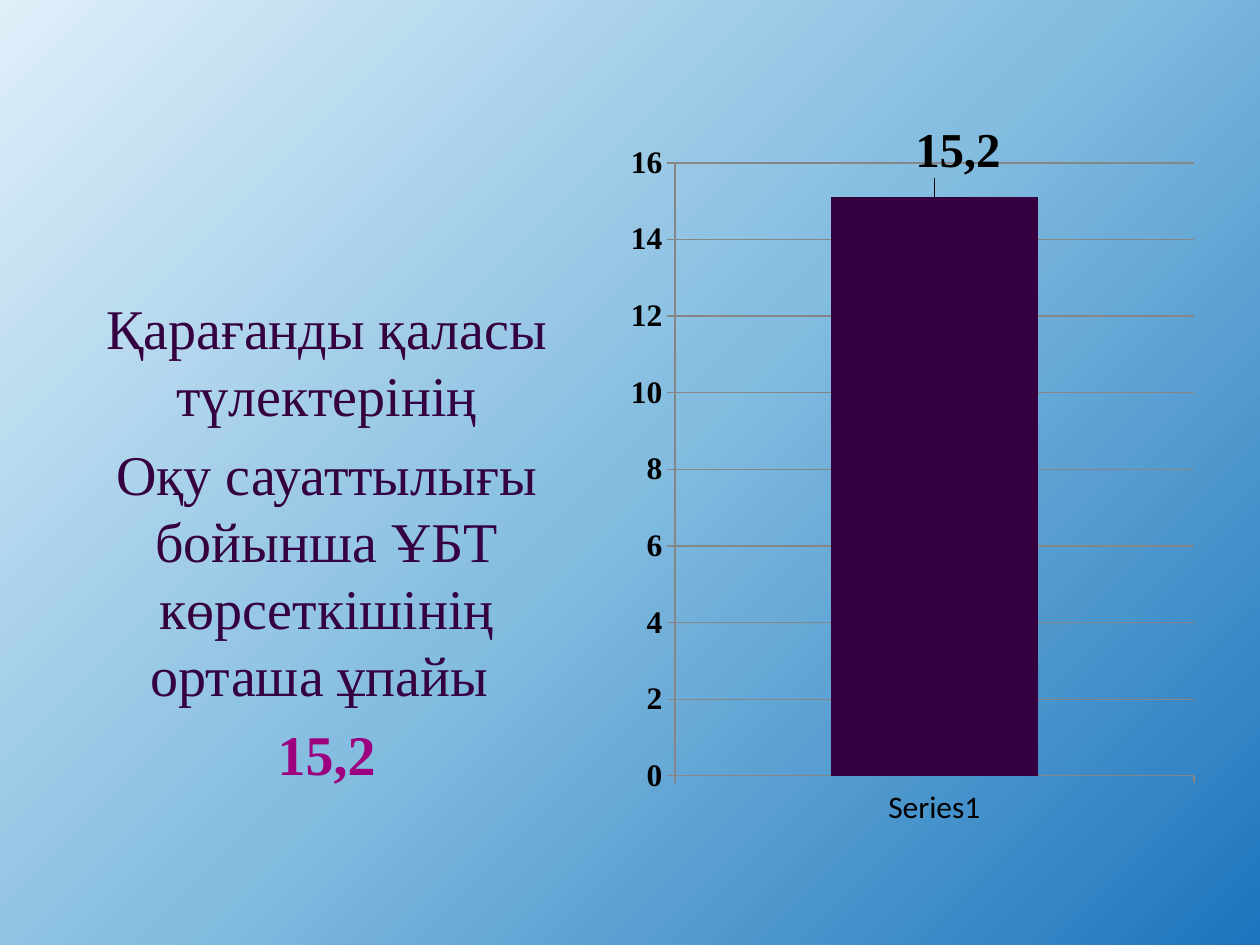
from copy import deepcopy
from lxml.etree import SubElement
from pptx import Presentation
from pptx.chart.data import CategoryChartData
from pptx.dml.color import RGBColor
from pptx.enum.chart import XL_CHART_TYPE, XL_LABEL_POSITION, XL_TICK_MARK
from pptx.enum.text import PP_ALIGN
from pptx.oxml.ns import qn
from pptx.util import Pt

HUES = {"deep": "1D75BD", "mid": "84BDE0", "pale": "DFEFF9",
        "plum": "340040", "pink": "9C007F", "black": "000000", "grid": "868686"}
SERIF = "Times New Roman"
SANS = "Calibri"


class Deck:
    def __init__(self):
        self.prs = Presentation()
        self.prs.slide_width, self.prs.slide_height = Pt(720), Pt(540)
        self.slide = self.prs.slides.add_slide(self.prs.slide_layouts[6])

    def hue(self, name):
        return RGBColor.from_string(HUES[name])

    def font(self, font, face, size, hue, bold=False):
        font.name, font.size, font.bold = face, Pt(size), bold
        font.color.rgb = self.hue(hue)

    def back(self, names, angle):
        fill = self.slide.background.fill
        fill.gradient()
        fill.gradient_angle = angle
        # The default gradient has two stops; add the middle one
        first = fill.gradient_stops[0]._gs
        first.addnext(deepcopy(first))
        for i, (stop, name) in enumerate(zip(fill.gradient_stops, names)):
            stop.position = i / (len(names) - 1)
            stop.color.rgb = self.hue(name)

    def text(self, box, lines, size):
        frame = self.slide.shapes.add_textbox(*map(Pt, box)).text_frame
        frame.word_wrap = True
        frame.text = "\n".join(line for line, _, _ in lines)
        for i, (para, (_, hue, bold)) in enumerate(zip(frame.paragraphs, lines)):
            para.alignment = PP_ALIGN.CENTER
            if i:
                para.space_before = Pt(6.5)
            for run in para.runs:
                self.font(run.font, SERIF, size, hue, bold)

    def layout(self, node, **parts):
        manual = SubElement(node, qn("c:manualLayout"))
        for key, val in parts.items():
            SubElement(manual, qn("c:" + key)).set("val", str(val))

    def axis(self, axis, face, bold):
        self.font(axis.tick_labels.font, face, 18, "black", bold)
        axis.major_tick_mark = XL_TICK_MARK.OUTSIDE
        axis.format.line.color.rgb = self.hue("grid")
        axis.format.line.width = Pt(0.75)

    def column(self, box, name, cat, val, label):
        data = CategoryChartData()
        data.categories = [cat]
        data.add_series(name, [val])
        chart = self.slide.shapes.add_chart(
            XL_CHART_TYPE.COLUMN_CLUSTERED, *map(Pt, box), data).chart
        chart.has_legend = chart.has_title = False
        self.font(chart.font, SANS, 18, "black")

        # Axes and grid
        self.axis(chart.category_axis, SANS, False)
        scale = chart.value_axis
        self.axis(scale, SERIF, True)
        scale.minimum_scale, scale.maximum_scale, scale.major_unit = 0, 16, 2
        line = scale.major_gridlines.format.line
        line.color.rgb, line.width = self.hue("grid"), Pt(0.75)

        # Column
        plot = chart.plots[0]
        plot.vary_by_categories, plot.gap_width = False, 150
        fill = plot.series[0].format.fill
        fill.solid()
        fill.fore_color.rgb = self.hue("plum")

        # Label, moved up and to the right
        tag = plot.series[0].points[0].data_label
        tag.text_frame.text = label
        self.font(tag.text_frame.paragraphs[0].runs[0].font, SERIF, 28, "black", True)
        tag.position = XL_LABEL_POSITION.OUTSIDE_END
        node = plot.series[0]._element.find(".//" + qn("c:dLbl"))
        place = SubElement(node, qn("c:layout"))
        node.find(qn("c:idx")).addnext(place)
        self.layout(place, x=0.04, y=-0.02)

        # Plot area
        area = chart._chartSpace.find(".//" + qn("c:plotArea"))
        place = area.find(qn("c:layout"))
        if place is None:
            place = SubElement(area, qn("c:layout"))
            area.insert(0, place)
        self.layout(place, layoutTarget="inner", xMode="edge", yMode="edge",
                    x=0.094, y=0.047, w=0.886, h=0.864)


def main():
    deck = Deck()
    deck.back(["deep", "mid", "pale"], 135)
    # Message on the left
    deck.text((36.7, 164, 300, 290), [
        ("Қарағанды қаласы түлектерінің", "plum", False),
        ("Оқу сауаттылығы бойынша ҰБТ көрсеткішінің орташа ұпайы ", "plum", False),
        ("15,2", "pink", True)], 32)
    # Score chart on the right
    deck.column((354.2, 71.3, 334.8, 408.2), "Series 1", "Series1", 15.1, "15,2")
    deck.prs.save("out.pptx")


if __name__ == "__main__":
    main()
